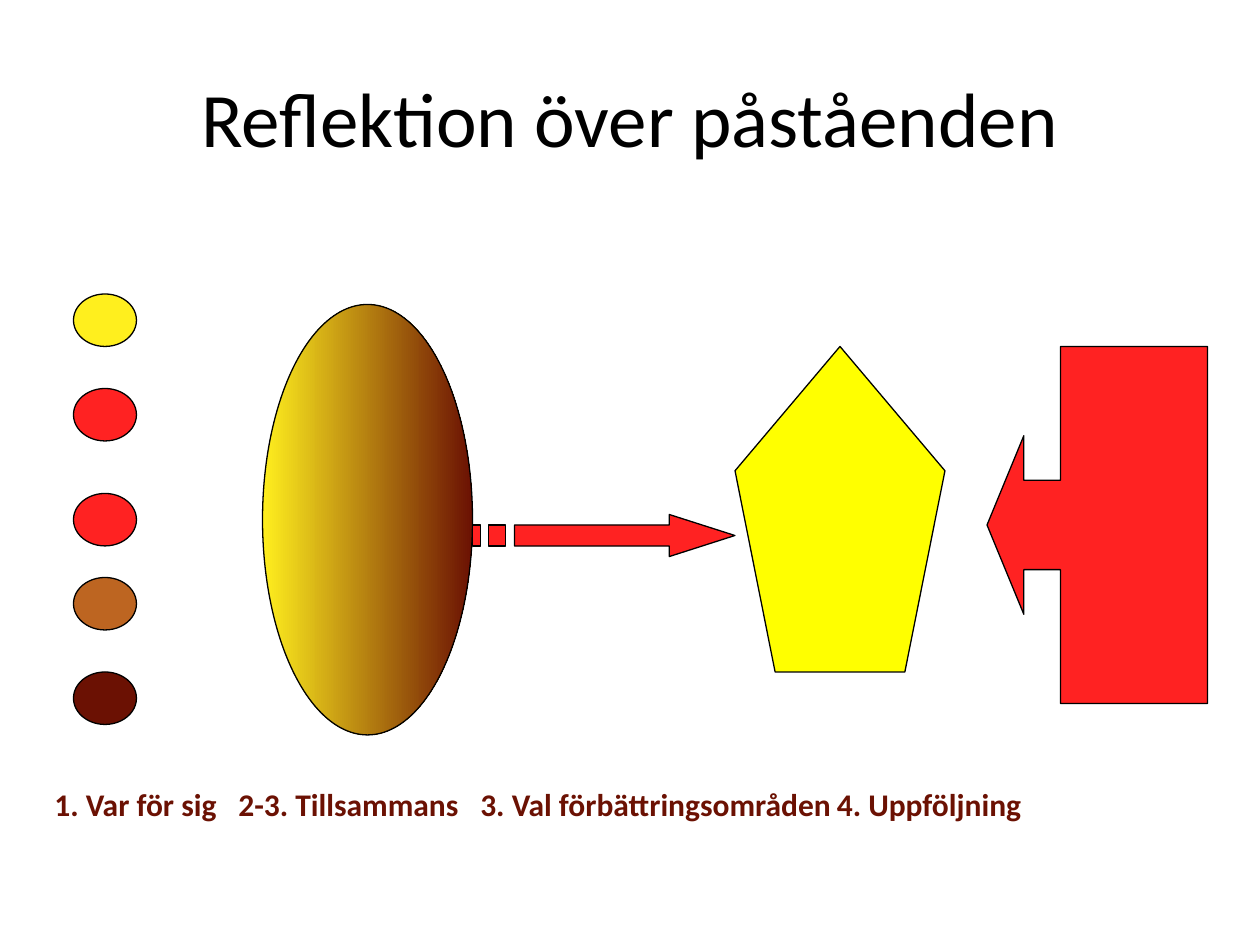
from pptx import Presentation
from pptx.dml.color import RGBColor
from pptx.enum.shapes import MSO_SHAPE
from pptx.enum.text import MSO_ANCHOR, PP_ALIGN
from pptx.oxml.ns import qn
from pptx.util import Inches, Pt
from lxml.etree import SubElement

CELL = Inches(1) // 12  # the grid has 120 columns and 90 rows
FINE = 100  # freeform points are placed in hundredths of a cell

YELLOW, RED, ORANGE, BROWN = "FFEF1E", "FF2222", "BD6521", "6B1103"
BLACK, BRIGHT_YELLOW = "000000", "FFFF00"


def color(value):
    return RGBColor.from_string(value)


def cells(*values):
    return [round(value * CELL) for value in values]


class SlideBuilder:
    font_name = "Calibri"
    line_width = Pt(0.75)

    def __init__(self, page):
        self.page = page

    def style(self, shape, fill):
        shape.shadow.inherit = False
        if isinstance(fill, tuple):
            shape.fill.gradient()
            shape.fill.gradient_angle = 0
            for stop, value in zip(shape.fill.gradient_stops, fill):
                stop.color.rgb = color(value)
        else:
            shape.fill.solid()
            shape.fill.fore_color.rgb = color(fill)
        shape.line.color.rgb = color(BLACK)
        shape.line.width = self.line_width
        return shape

    def shape(self, kind, place, fill):
        return self.style(self.page.shapes.add_shape(kind, *cells(*place)), fill)

    def outline(self, contours, fill):
        scaled = [[(round(x * FINE), round(y * FINE)) for x, y in points]
                  for points in contours]
        builder = self.page.shapes.build_freeform(*scaled[0][0], scale=CELL / FINE)
        for index, points in enumerate(scaled):
            if index:
                builder.move_to(*points[0])
            builder.add_line_segments(points[1:], close=True)
        return self.style(builder.convert_to_shape(), fill)

    def set_text(self, para, text, size, value, bold=False):
        para.text = text
        para.font.name = self.font_name
        para.font.size = Pt(size)
        para.font.bold = bold
        para.font.color.rgb = color(value)

    def title(self, text, place):
        box = self.page.shapes.title
        box.left, box.top, box.width, box.height = cells(*place)
        box.text_frame.vertical_anchor = MSO_ANCHOR.MIDDLE
        para = box.text_frame.paragraphs[0]
        self.set_text(para, text, 44, BLACK)
        para.alignment = PP_ALIGN.CENTER

    def labels(self, texts, stops, place):
        box = self.page.shapes.add_textbox(*cells(*place))
        box.text_frame.word_wrap = True
        para = box.text_frame.paragraphs[0]
        self.set_text(para, "\t".join(texts), 18, BROWN, bold=True)
        tabs = SubElement(para._p.get_or_add_pPr(), qn("a:tabLst"))
        # Tab list comes before the default run properties
        tabs.getparent().insert(0, tabs)
        for stop in stops:
            SubElement(tabs, qn("a:tab"), pos=str(Inches(stop)), algn="l")


def rectangle(left, right, top, bottom):
    return [(left, top), (left, bottom), (right, bottom), (right, top)]


def main():
    deck = Presentation()
    deck.slide_width, deck.slide_height = Inches(10), Inches(7.5)
    slide = SlideBuilder(deck.slides.add_slide(deck.slide_layouts[5]))

    slide.title("Reflektion över påståenden", (6, 3.6, 108, 15))

    # Individual views
    for top, fill in zip((28, 37, 47, 55, 64), (YELLOW, RED, RED, ORANGE, BROWN)):
        slide.shape(MSO_SHAPE.OVAL, (7, top, 6, 5), fill)

    # Shared view
    slide.shape(MSO_SHAPE.OVAL, (25, 29, 20, 41), (YELLOW, BROWN))

    # Striped arrow: head and shaft, then two stripes
    top, bottom, head, tip = 50, 52, 63.75, 70
    arrow = [(head, top - 1), (head, top), (49, top), (49, bottom),
             (head, bottom), (head, bottom + 1), (tip, 51)]
    stripes = [rectangle(left, right, top, bottom)
               for left, right in ((46.56, 48.12), (45, 45.78))]
    slide.outline([arrow, *stripes], RED)

    # Areas to improve and follow-up
    slide.shape(MSO_SHAPE.REGULAR_PENTAGON, (70, 33, 20, 31), BRIGHT_YELLOW)
    callout = slide.shape(MSO_SHAPE.LEFT_ARROW_CALLOUT, (94, 33, 21, 34), RED)
    for index, share in enumerate((0.405, 0.405, 0.167, 0.667)):
        callout.adjustments[index] = share

    # Step labels
    slide.labels(("1. Var för sig", "2-3. Tillsammans",
                  "3. Val förbättringsområden", "4. Uppföljning"),
                 (1.46, 3.38, 6.21), (4, 74.2, 112, 4.8))

    deck.save("out.pptx")


if __name__ == "__main__":
    main()
